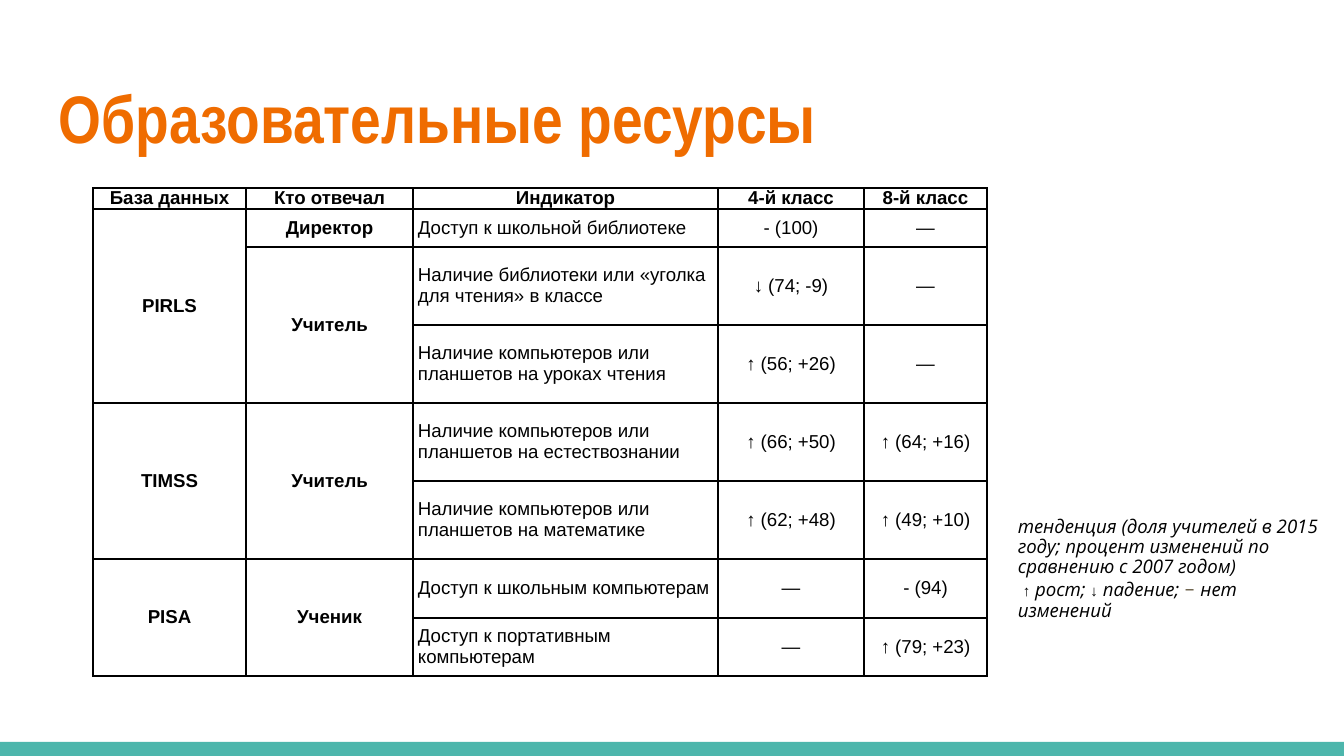
from pptx import Presentation
from pptx.dml.color import RGBColor
from pptx.enum.shapes import MSO_SHAPE
from pptx.enum.text import MSO_ANCHOR, MSO_AUTO_SIZE, PP_ALIGN
from pptx.oxml import parse_xml
from pptx.oxml.ns import nsdecls
from pptx.util import Pt

RECTANGLE = MSO_SHAPE.RECTANGLE
MIDDLE, BOTTOM = MSO_ANCHOR.MIDDLE, MSO_ANCHOR.BOTTOM
LEFT, CENTER = PP_ALIGN.LEFT, PP_ALIGN.CENTER
NO_AUTOFIT = MSO_AUTO_SIZE.NONE

ORANGE = RGBColor(0xEF, 0x6C, 0x00)
TEAL = RGBColor(0x4D, 0xB6, 0xAC)
BLACK = RGBColor(0, 0, 0)
WHITE = RGBColor(0xFF, 0xFF, 0xFF)
BROWN = RGBColor(0x69, 0x5D, 0x46)

TITLE = "Образовательные ресурсы"
HEADER = ("База данных", "Кто отвечал", "Индикатор", "4-й класс", "8-й класс")
ROWS = [
    ("PIRLS", "Директор", "Доступ к школьной библиотеке", "- (100)", "—"),
    ("", "Учитель", "Наличие библиотеки или «уголка для чтения» в классе", "↓ (74; -9)", "—"),
    ("", "", "Наличие компьютеров или планшетов на уроках чтения", "↑ (56; +26)", "—"),
    ("TIMSS", "Учитель", "Наличие компьютеров или планшетов на естествознании", "↑ (66; +50)", "↑ (64; +16)"),
    ("", "", "Наличие компьютеров или планшетов на математике", "↑ (62; +48)", "↑ (49; +10)"),
    ("PISA", "Ученик", "Доступ к школьным компьютерам", "—", "- (94)"),
    ("", "", "Доступ к портативным компьютерам", "—", "↑ (79; +23)"),
]
COLUMN_WIDTHS = (153, 167, 305, 146, 123)
ROW_HEIGHTS = (21, 38, 78, 78, 78, 78, 59, 58)
INDICATOR_COLUMN = 2

WORDS = ("Open Sans", 10, True, BLACK)
ARROW = ("Arial", 8, False, BLACK)
DASH = ("Calibri", 12, False, BROWN)
NOTE = [
    [("тенденция (доля учителей в 2015 году; процент изменений по сравнению с 2007 годом)", WORDS)],
    [(" ", WORDS), ("↑", ARROW), (" рост; ", WORDS), ("↓", ARROW),
     (" падение; ", WORDS), ("– ", DASH), ("нет изменений", WORDS)],
]


def px(length):
    return round(length * 9144000 / 1344)


def set_font(font, name, size, color, bold=False, italic=False):
    font.name, font.size, font.bold, font.italic = name, Pt(size), bold, italic
    font.color.rgb = color


def set_insets(target, horizontal, vertical):
    target.margin_left = target.margin_right = px(horizontal)
    target.margin_top = target.margin_bottom = px(vertical)


def set_borders(cell):
    properties = cell._tc.get_or_add_tcPr()
    for index, side in enumerate(("lnL", "lnR", "lnT", "lnB")):
        properties.insert(index, parse_xml(
            f'<a:{side} {nsdecls("a")} w="{Pt(1)}"><a:solidFill>'
            f'<a:srgbClr val="{BLACK}"/></a:solidFill></a:{side}>'))


def fill_cell(cell, text, bold, alignment):
    cell.text_frame.text = text
    cell.vertical_anchor = MIDDLE
    set_insets(cell, 5, 0)
    cell.fill.solid()
    cell.fill.fore_color.rgb = WHITE
    set_borders(cell)
    paragraph = cell.text_frame.paragraphs[0]
    paragraph.alignment = alignment
    set_font(paragraph.font, "Arial", 10, BLACK, bold)
    for run in paragraph.runs:
        set_font(run.font, "Arial", 10, BLACK, bold)


def add_indicators(slide):
    rows = [HEADER] + ROWS
    table = slide.shapes.add_table(
        len(rows), len(HEADER), px(93), px(188),
        px(sum(COLUMN_WIDTHS)), px(sum(ROW_HEIGHTS))).table
    table.first_row = table.horz_banding = False
    for column, width in zip(table.columns, COLUMN_WIDTHS):
        column.width = px(width)
    for row, height in zip(table.rows, ROW_HEIGHTS):
        row.height = px(height)
    for r, row in enumerate(rows):
        for c, text in enumerate(row):
            bold = r == 0 or c < INDICATOR_COLUMN
            alignment = LEFT if r and c == INDICATOR_COLUMN else CENTER
            fill_cell(table.cell(r, c), text, bold, alignment)
    for c in range(INDICATOR_COLUMN):
        starts = [r for r, row in enumerate(rows) if row[c]] + [len(rows)]
        for start, end in zip(starts, starts[1:]):
            if end - start > 1:
                table.cell(start, c).merge(table.cell(end - 1, c))


def add_note(slide):
    frame = slide.shapes.add_textbox(px(1005), px(504), px(339), px(154)).text_frame
    frame.word_wrap = True
    set_insets(frame, 13, 13)
    frame.text = "\n".join("" for _ in NOTE)
    for paragraph, pieces in zip(frame.paragraphs, NOTE):
        paragraph.line_spacing = 0.9
        for text, (name, size, italic, color) in pieces:
            run = paragraph.add_run()
            run.text = text
            set_font(run.font, name, size, color, italic=italic)


def main():
    deck = Presentation()
    deck.slide_width, deck.slide_height = px(1344), px(756)
    slide = deck.slides.add_slide(deck.slide_layouts[5])

    band = slide.shapes.add_shape(RECTANGLE, 0, px(742), px(1344), px(14))
    band.shadow.inherit = False
    band.fill.solid()
    band.fill.fore_color.rgb = TEAL
    band.line.fill.background()

    title = slide.shapes.title
    title.left, title.top, title.width, title.height = px(46), px(66), px(1252), px(104)
    frame = title.text_frame
    frame.text = TITLE
    frame.auto_size = NO_AUTOFIT
    frame.vertical_anchor = BOTTOM
    set_insets(frame, 13, 13)
    frame.paragraphs[0].alignment = LEFT
    set_font(frame.paragraphs[0].runs[0].font, "Arial Narrow", 36, ORANGE, bold=True)

    add_indicators(slide)
    add_note(slide)
    deck.save("out.pptx")


if __name__ == "__main__":
    main()
